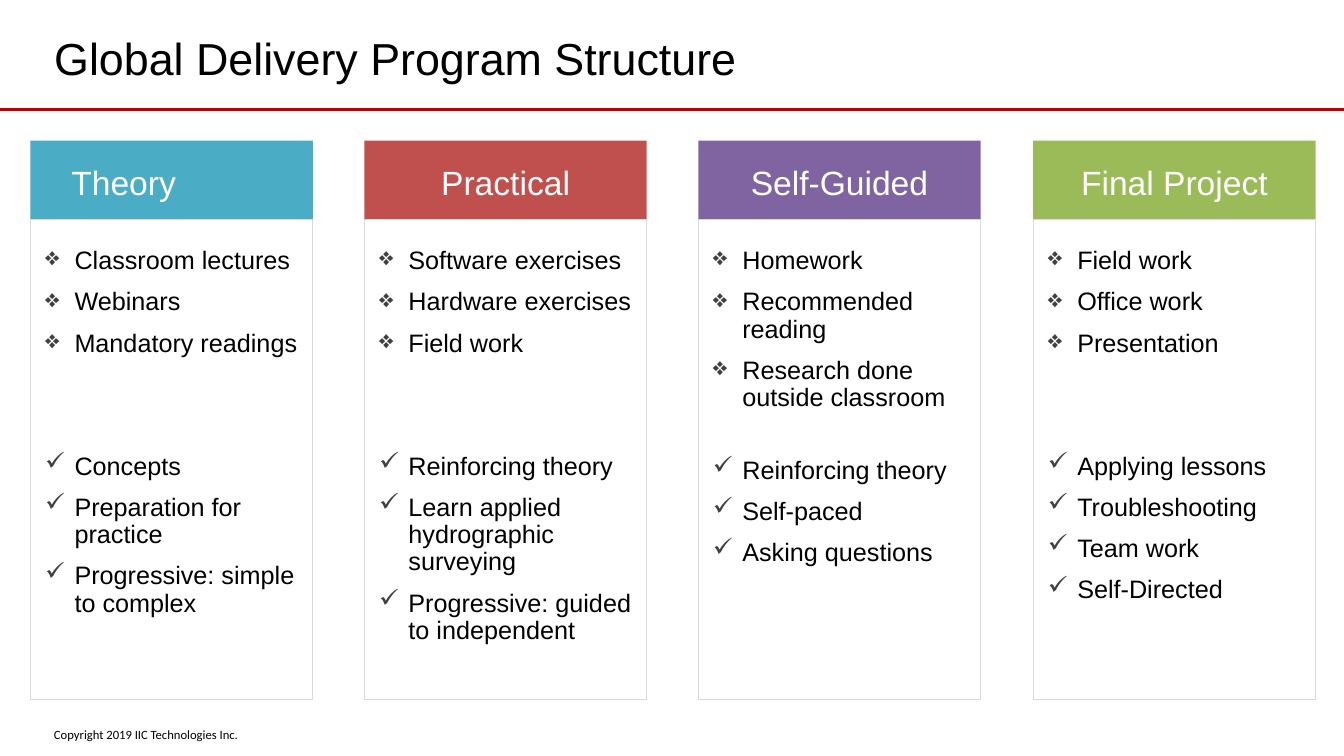
from dataclasses import dataclass

from lxml import etree
from pptx import Presentation
from pptx import util as u
from pptx.dml.color import RGBColor
from pptx.enum import shapes, text
from pptx.oxml import ns


@dataclass(frozen=True)
class Theme:
    ink: str = "000000"
    paper: str = "FFFFFF"
    bullet: str = "404040"
    border: str = "D9D9D9"
    rule: str = "C00000"
    font: str = "Arial"
    footer_font: str = "Calibri"
    title_size: int = 32
    heading_size: int = 24
    item_size: int = 18
    footer_size: int = 9
    line_spacing: float = 0.9
    item_gap: int = 10


@dataclass(frozen=True)
class Box:
    left: int
    top: int
    width: int
    height: int

    def emu(self) -> tuple[int, ...]:
        return tuple(px(n) for n in (self.left, self.top, self.width, self.height))


@dataclass(frozen=True)
class Column:
    heading: str
    color: str
    activities: tuple[str, ...]
    outcomes: tuple[str, ...]
    group_gap: float = 68.5
    heading_indent: int = 0  # 0 centres the heading


THEME = Theme()
SLIDE_WIDTH, SLIDE_HEIGHT = 1280, 720
FIRST_LEFT, LAST_LEFT, COLUMN_WIDTH = 29, 984, 269
HANGING_INDENT = 28

COLUMNS = (
    Column("Theory", "4BACC6",
           ("Classroom lectures", "Webinars", "Mandatory readings"),
           ("Concepts", "Preparation for practice", "Progressive: simple to complex"),
           heading_indent=27),
    Column("Practical", "C0504D",
           ("Software exercises", "Hardware exercises", "Field work"),
           ("Reinforcing theory", "Learn applied hydrographic surveying",
            "Progressive: guided to independent")),
    Column("Self-Guided", "8064A2",
           ("Homework", "Recommended reading", "Research done outside classroom"),
           ("Reinforcing theory", "Self-paced", "Asking questions"),
           group_gap=32.5),
    Column("Final Project", "9BBB59",
           ("Field work", "Office work", "Presentation"),
           ("Applying lessons", "Troubleshooting", "Team work", "Self-Directed")),
)


def px(length: int) -> int:
    return u.Emu(length * 9525)


def rgb(color: str) -> RGBColor:
    return RGBColor.from_string(color)


def style(paragraph, size: int, color: str, font: str = THEME.font) -> None:
    for run in paragraph.runs:
        run.font.size = u.Pt(size)
        run.font.name = font
        run.font.color.rgb = rgb(color)


def set_insets(frame, left: int, top: int, right: int, bottom: int) -> None:
    frame.margin_left, frame.margin_top = px(left), px(top)
    frame.margin_right, frame.margin_bottom = px(right), px(bottom)


def add_panel(slide, box: Box, fill: str, border: str | None = None):
    panel = slide.shapes.add_shape(shapes.MSO_SHAPE.RECTANGLE, *box.emu())
    panel.shadow.inherit = False
    panel.fill.solid()
    panel.fill.fore_color.rgb = rgb(fill)
    if border:
        panel.line.color.rgb = rgb(border)
        panel.line.width = u.Pt(0.75)
    else:
        panel.line.fill.background()
    panel.text_frame.word_wrap = True
    return panel.text_frame


def add_bullet(paragraph, mark: str) -> None:
    properties = paragraph._p.get_or_add_pPr()
    properties.set("marL", str(px(HANGING_INDENT)))
    properties.set("indent", str(-px(HANGING_INDENT)))
    color = etree.SubElement(properties, ns.qn("a:buClr"))
    etree.SubElement(color, ns.qn("a:srgbClr"), val=THEME.bullet)
    etree.SubElement(properties, ns.qn("a:buChar"), char=mark)


def add_column(slide, column: Column, left: int) -> None:
    # Coloured heading
    heading = add_panel(slide, Box(left, 134, COLUMN_WIDTH, 84), column.color)
    set_insets(heading, 12 + column.heading_indent, 4, 12, 4)
    heading.vertical_anchor = text.MSO_ANCHOR.MIDDLE
    heading.text = column.heading
    label = heading.paragraphs[0]
    label.alignment = text.PP_ALIGN.LEFT if column.heading_indent else text.PP_ALIGN.CENTER
    label.line_spacing = THEME.line_spacing
    style(label, THEME.heading_size, THEME.paper)

    # Activities, then outcomes
    body = add_panel(slide, Box(left, 209, COLUMN_WIDTH, 457), THEME.paper, THEME.border)
    set_insets(body, 14, 27, 14, 0)
    body.vertical_anchor = text.MSO_ANCHOR.TOP
    body.text = "\n".join(column.activities + column.outcomes)
    first_outcome = len(column.activities)
    for index, item in enumerate(body.paragraphs):
        add_bullet(item, "❖" if index < first_outcome else "✓")
        item.alignment = text.PP_ALIGN.LEFT
        item.line_spacing = THEME.line_spacing
        if index:
            gap = column.group_gap if index == first_outcome else THEME.item_gap
            item.space_before = u.Pt(gap)
        style(item, THEME.item_size, THEME.ink)


def add_title(slide, wording: str) -> None:
    title = slide.shapes.title
    title.left, title.top, title.width, title.height = Box(42, 23, 761, 64).emu()
    frame = title.text_frame
    frame.text = wording
    frame.auto_size = text.MSO_AUTO_SIZE.NONE
    frame.vertical_anchor = text.MSO_ANCHOR.MIDDLE
    frame.paragraphs[0].alignment = text.PP_ALIGN.LEFT
    style(frame.paragraphs[0], THEME.title_size, THEME.ink)


def add_rule(slide, top: int) -> None:
    rule = slide.shapes.add_connector(
        shapes.MSO_CONNECTOR.STRAIGHT, 0, px(top), px(SLIDE_WIDTH), px(top))
    rule.line.color.rgb = rgb(THEME.rule)
    rule.line.width = u.Pt(2.25)
    etree.SubElement(rule._element.spPr, ns.qn("a:effectLst"))


def add_footer(slide, wording: str) -> None:
    frame = slide.shapes.add_textbox(*Box(42, 688, 197, 24).emu()).text_frame
    frame.word_wrap = False
    frame.text = wording
    style(frame.paragraphs[0], THEME.footer_size, THEME.ink, THEME.footer_font)


def main() -> None:
    deck = Presentation()
    deck.slide_width, deck.slide_height = px(SLIDE_WIDTH), px(SLIDE_HEIGHT)
    slide = deck.slides.add_slide(deck.slide_layouts.get_by_name("Title Only"))

    add_rule(slide, 104)
    add_footer(slide, "Copyright 2019 IIC Technologies Inc.")
    add_title(slide, "Global Delivery Program Structure")
    for index, column in enumerate(COLUMNS):
        offset = (LAST_LEFT - FIRST_LEFT) * index // (len(COLUMNS) - 1)
        add_column(slide, column, FIRST_LEFT + offset)

    deck.save("out.pptx")


if __name__ == "__main__":
    main()
